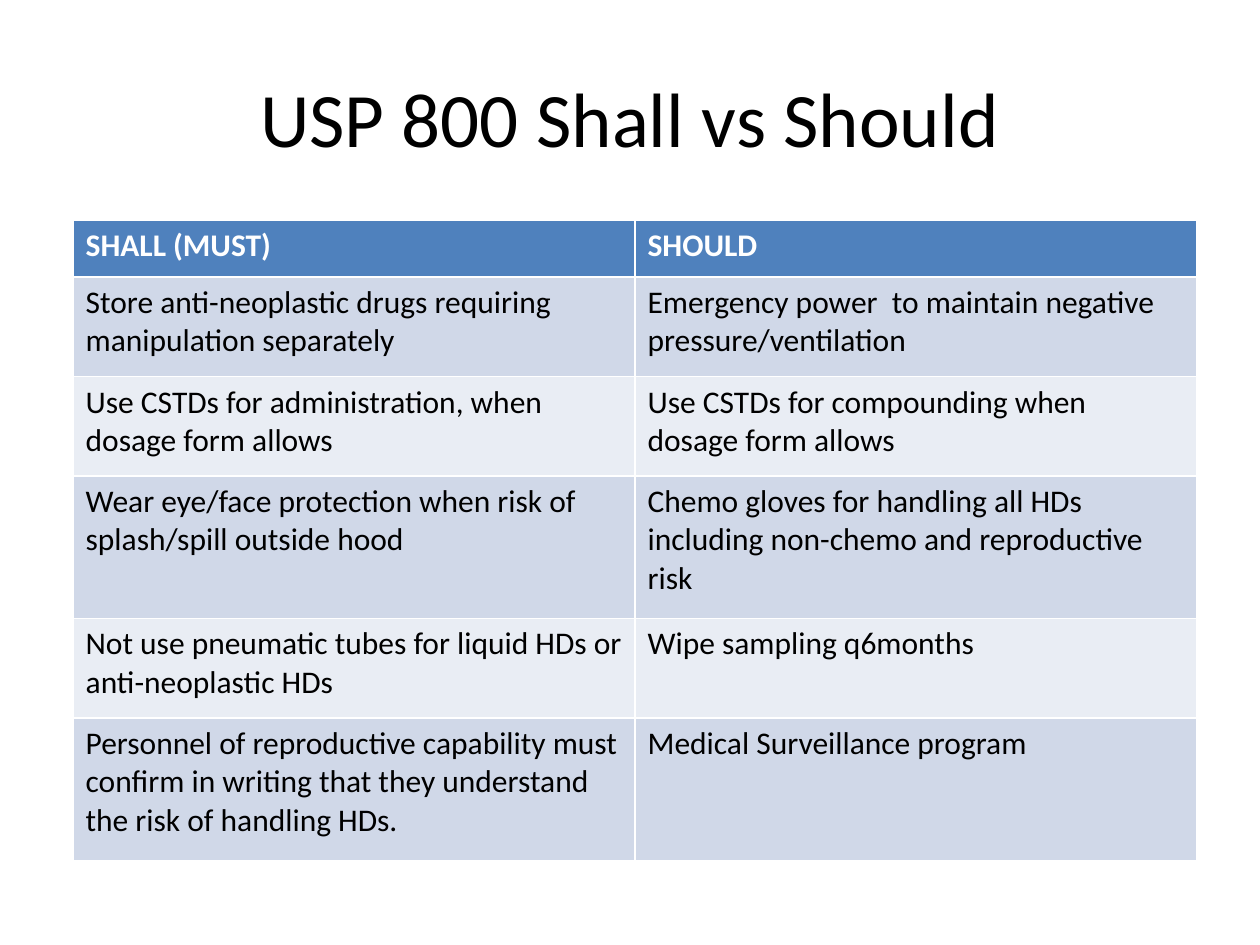
from collections import namedtuple

from pptx import Presentation
from pptx.dml.color import RGBColor
from pptx.enum.text import MSO_ANCHOR, PP_ALIGN
from pptx.util import Inches, Pt

Box = namedtuple("Box", "left top width height")

BLACK = RGBColor(0x00, 0x00, 0x00)
WHITE = RGBColor(0xFF, 0xFF, 0xFF)
HEADER_BLUE = RGBColor(0x4F, 0x81, 0xBD)
BAND_DARK = RGBColor(0xD0, 0xD8, 0xE8)
BAND_LIGHT = RGBColor(0xE9, 0xED, 0xF4)
FONT = "Calibri"

TITLE = "USP 800 Shall vs Should"
REQUIREMENTS = [
    ("SHALL (MUST)", "SHOULD"),
    ("Store anti-neoplastic drugs requiring manipulation separately",
     "Emergency power  to maintain negative pressure/ventilation"),
    ("Use CSTDs for administration, when dosage form allows",
     "Use CSTDs for compounding when dosage form allows"),
    ("Wear eye/face protection when risk of splash/spill outside hood",
     "Chemo gloves for handling all HDs including non-chemo and reproductive risk"),
    ("Not use pneumatic tubes for liquid HDs or anti-neoplastic HDs",
     "Wipe sampling q6months"),
    ("Personnel of reproductive capability must confirm in writing that they "
     "understand the risk of handling HDs.",
     "Medical Surveillance program"),
]
ROW_WEIGHTS = [45, 79, 79, 113, 79, 113]


def share_box(deck, left, top, width, height):
    """Return a box given as shares of the slide's size."""
    return Box(int(deck.slide_width * left), int(deck.slide_height * top),
               int(deck.slide_width * width), int(deck.slide_height * height))


def write(frame, text, size, color, bold=False):
    """Fill a text frame with one formatted paragraph and return it."""
    frame.text = text
    paragraph = frame.paragraphs[0]
    font = paragraph.runs[0].font
    font.name, font.size, font.bold = FONT, Pt(size), bold
    font.color.rgb = color
    return paragraph


def add_title(slide, box):
    """Place the centred heading in its box."""
    frame = slide.shapes.add_textbox(*box).text_frame
    frame.word_wrap = True
    frame.vertical_anchor = MSO_ANCHOR.MIDDLE
    write(frame, TITLE, 44, BLACK).alignment = PP_ALIGN.CENTER


def add_requirements(slide, box):
    """Place the banded table of requirements and recommendations."""
    table = slide.shapes.add_table(
        len(REQUIREMENTS), len(REQUIREMENTS[0]), *box).table
    for index, (entries, weight) in enumerate(zip(REQUIREMENTS, ROW_WEIGHTS)):
        table.rows[index].height = box.height * weight // sum(ROW_WEIGHTS)
        is_header = index == 0
        band = BAND_DARK if index % 2 else BAND_LIGHT
        for cell, entry in zip(table.rows[index].cells, entries):
            cell.fill.solid()
            cell.fill.fore_color.rgb = HEADER_BLUE if is_header else band
            write(cell.text_frame, entry, 18,
                  WHITE if is_header else BLACK, is_header)


def main():
    """Build the slide and save it."""
    deck = Presentation()
    deck.slide_width, deck.slide_height = Inches(10), Inches(7.5)
    slide = deck.slides.add_slide(deck.slide_layouts[6])
    add_title(slide, share_box(deck, 0.05, 0.04, 0.9, 1 / 6))
    add_requirements(slide, share_box(deck, 0.058, 7 / 30, 0.892, 5.08 / 7.5))
    deck.save("out.pptx")


if __name__ == "__main__":
    main()
